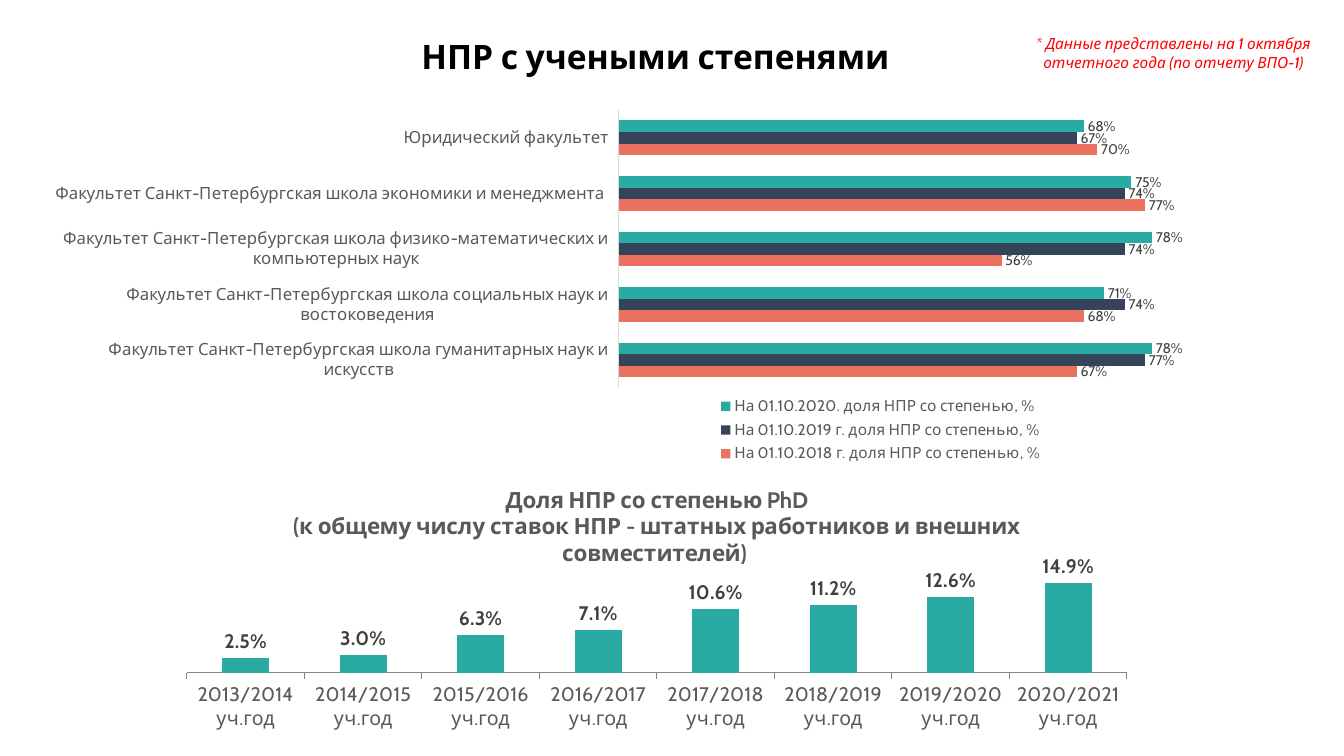
from lxml import etree
from pptx import Presentation
from pptx.chart.data import CategoryChartData
from pptx.dml.color import RGBColor
from pptx.enum.chart import XL_CHART_TYPE, XL_LABEL_POSITION, XL_LEGEND_POSITION, XL_TICK_LABEL_POSITION, XL_TICK_MARK
from pptx.enum.text import MSO_ANCHOR, PP_ALIGN
from pptx.oxml.ns import qn
from pptx.util import Pt

BAR, COLUMN = XL_CHART_TYPE.BAR_CLUSTERED, XL_CHART_TYPE.COLUMN_CLUSTERED
OUT_END = XL_LABEL_POSITION.OUTSIDE_END
BOTTOM = XL_LEGEND_POSITION.BOTTOM
LOW = XL_TICK_LABEL_POSITION.LOW
TICK_NONE, TICK_OUT = XL_TICK_MARK.NONE, XL_TICK_MARK.OUTSIDE
CENTER = PP_ALIGN.CENTER
TOP, MIDDLE = MSO_ANCHOR.TOP, MSO_ANCHOR.MIDDLE

FONT = "Cabin"
COLORS = {
    "black": "000000", "red": "FF0000", "text": "595959", "label": "404040",
    "axis": "868686", "light": "D9D9D9",
    "teal": "29ABA4", "navy": "354458", "coral": "EB7260",
}

TITLE = "НПР с учеными степенями"
NOTE = "* Данные представлены на 1 октября отчетного года (по отчету ВПО-1)"
PHD_TITLE = [
    "Доля НПР со степенью PhD",
    "(к общему числу ставок НПР - штатных работников и внешних совместителей) ",
]
PHD_SHARE = [0.025, 0.03, 0.063, 0.071, 0.106, 0.112, 0.126, 0.149]
FIRST_YEAR = 2013
FACULTIES = [
    "Факультет Санкт-Петербургская школа гуманитарных наук и искусств",
    "Факультет Санкт-Петербургская школа социальных наук и востоковедения",
    "Факультет Санкт-Петербургская школа физико-математических и компьютерных наук",
    "Факультет Санкт-Петербургская школа экономики и менеджмента ",
    "Юридический факультет",
]
DEGREE_SERIES = [
    ("На 01.10.2018 г. доля НПР со степенью, %", [0.67, 0.68, 0.56, 0.77, 0.7], "coral"),
    ("На 01.10.2019 г. доля НПР со степенью, %", [0.77, 0.74, 0.74, 0.74, 0.67], "navy"),
    ("На 01.10.2020. доля НПР со степенью, %", [0.78, 0.71, 0.78, 0.75, 0.68], "teal"),
]

TITLE_BOX = (259, 31, 793, 64)
NOTE_BOX = (1025, 29, 297, 48)
PHD_BOX = (168, 472, 978, 265)
PHD_PLOT = (187, 576, 940, 97)
DEGREE_BOX = (46, 95, 1207, 377)
DEGREE_PLOT = (619, 110, 615, 278)
DEGREE_LEGEND = (716, 392, 330, 76)


def px(n):
    return round(n * 914400 / 100.8)


def box(rect):
    return [px(n) for n in rect]


def style(font, size, color, bold=False, italic=False):
    font.name, font.size = FONT, Pt(size)
    font.bold, font.italic = bold, italic
    font.color.rgb = RGBColor.from_string(COLORS[color])


def write(tf, text, size, color, anchor, **kw):
    tf.word_wrap = True
    tf.vertical_anchor = anchor
    p = tf.paragraphs[0]
    p.alignment = CENTER
    r = p.add_run()
    r.text = text
    style(r.font, size, color, **kw)


def set_layout(parent, index, rect, frame, inner=False):
    for old in parent.findall(qn("c:layout")):
        parent.remove(old)
    layout = etree.Element(qn("c:layout"))
    manual = etree.SubElement(layout, qn("c:manualLayout"))
    x, y, w, h = rect
    left, top, width, height = frame
    values = [("xMode", "edge"), ("yMode", "edge"),
              ("x", (x - left) / width), ("y", (y - top) / height),
              ("w", w / width), ("h", h / height)]
    if inner:
        values.insert(0, ("layoutTarget", "inner"))
    for name, value in values:
        etree.SubElement(manual, qn("c:" + name)).set("val", str(value))
    parent.insert(index, layout)


def add_bars(s, kind, frame, plot_rect, cats, series, top_value, gap, fmt,
             label_size, label_bold, cat_size, tick, line):
    data = CategoryChartData(number_format=fmt)
    data.categories = cats
    for name, values, _ in series:
        data.add_series(name, values)
    chart = s.shapes.add_chart(kind, *box(frame), data).chart
    style(chart.font, 10, "black")
    chart.has_title = chart.has_legend = False

    plot = chart.plots[0]
    plot.vary_by_categories = False
    plot.gap_width, plot.overlap = gap, 0
    for ser, (_, _, color) in zip(plot.series, series):
        ser.format.fill.solid()
        ser.format.fill.fore_color.rgb = RGBColor.from_string(COLORS[color])
        labels = ser.data_labels
        labels.show_value = True
        labels.number_format, labels.number_format_is_linked = fmt, False
        labels.position = OUT_END
        style(labels.font, label_size, "label", bold=label_bold)

    val = chart.value_axis
    val.minimum_scale, val.maximum_scale = 0, top_value
    val.has_major_gridlines = False
    val.visible = False
    cat = chart.category_axis
    cat.major_tick_mark, cat.minor_tick_mark = tick, TICK_NONE
    cat.tick_label_position = LOW
    cat.format.line.width = Pt(0.75)
    cat.format.line.color.rgb = RGBColor.from_string(COLORS[line])
    style(cat.tick_labels.font, cat_size, "text")
    area = chart.element.find(qn("c:chart")).find(qn("c:plotArea"))
    set_layout(area, 0, plot_rect, frame, inner=True)
    return chart


prs = Presentation()
prs.slide_width, prs.slide_height = px(1344), px(756)
s = prs.slides.add_slide(prs.slide_layouts[5])

title = s.shapes.title
title.left, title.top, title.width, title.height = box(TITLE_BOX)
write(title.text_frame, TITLE, 24, "black", TOP, bold=True)

years = [f"{FIRST_YEAR + i}/{FIRST_YEAR + i + 1} уч.год" for i in range(len(PHD_SHARE))]
phd = add_bars(s, COLUMN, PHD_BOX, PHD_PLOT, years, [(PHD_TITLE[0], PHD_SHARE, "teal")],
               0.16, 150, "0.0%", 14, True, 14, TICK_OUT, "axis")
phd.has_title = True
phd.chart_title.include_in_layout = False
tf = phd.chart_title.text_frame
for i, line in enumerate(PHD_TITLE):
    p = tf.add_paragraph() if i else tf.paragraphs[0]
    p.alignment = CENTER
    r = p.add_run()
    r.text = line
    style(r.font, 16, "text", bold=True)

degree = add_bars(s, BAR, DEGREE_BOX, DEGREE_PLOT, FACULTIES, DEGREE_SERIES,
                  0.9, 182, "0%", 10, False, 12, TICK_NONE, "light")
degree.has_legend = True
legend = degree.legend
legend.position = BOTTOM
legend.include_in_layout = False
style(legend.font, 11, "text")
legend_xml = degree.element.find(qn("c:chart")).find(qn("c:legend"))
set_layout(legend_xml, 1, DEGREE_LEGEND, DEGREE_BOX)

note = s.shapes.add_textbox(*box(NOTE_BOX))
tf = note.text_frame
tf.margin_left = tf.margin_right = tf.margin_top = tf.margin_bottom = px(6)
write(tf, NOTE, 11, "red", MIDDLE, italic=True)

prs.save("out.pptx")
